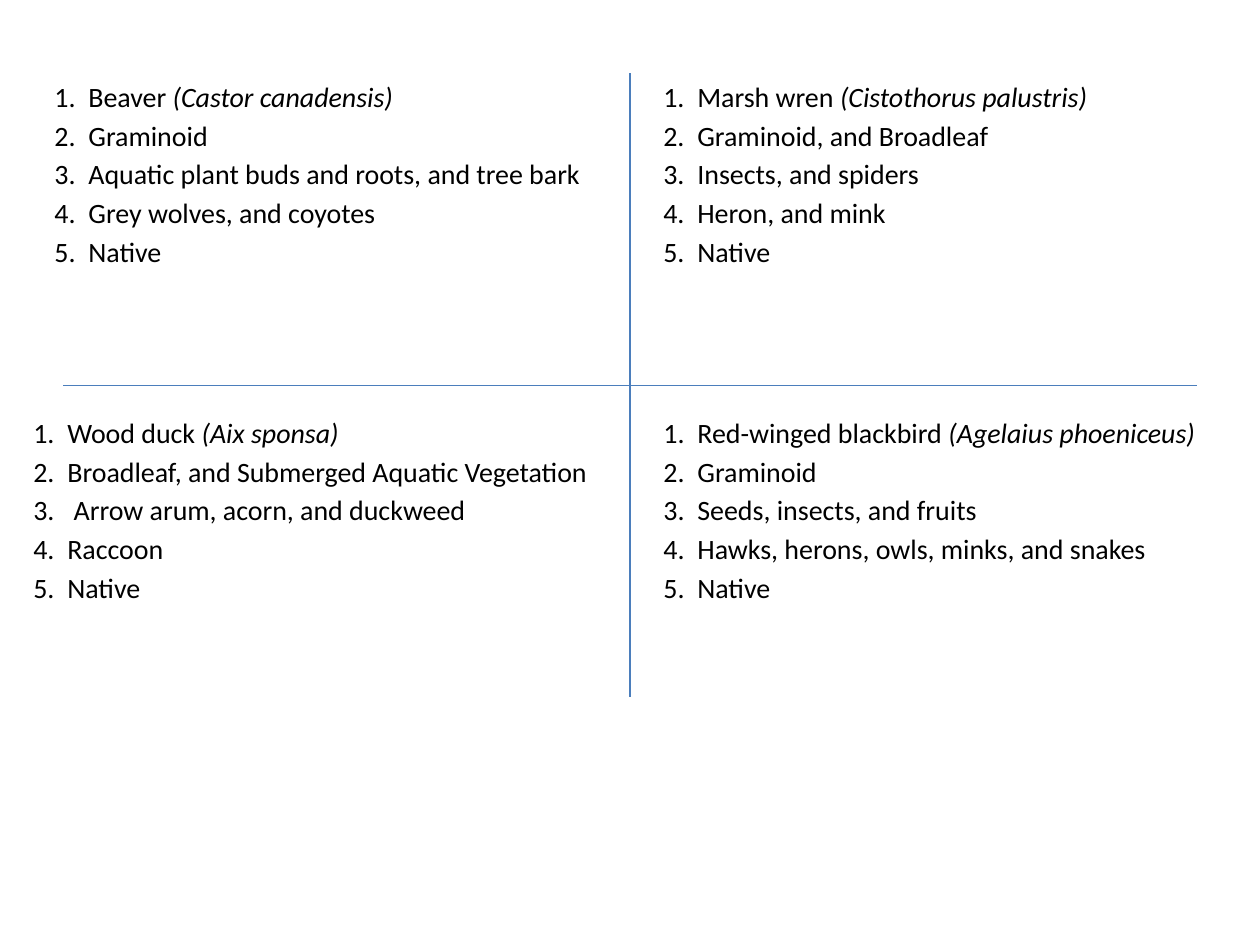
from lxml import etree
from pptx import Presentation
from pptx.dml.color import RGBColor
from pptx.enum.shapes import MSO_CONNECTOR
from pptx.enum.text import MSO_AUTO_SIZE
from pptx.oxml.ns import qn
from pptx.util import Inches, Pt

STRAIGHT = MSO_CONNECTOR.STRAIGHT
FIT_SHAPE = MSO_AUTO_SIZE.SHAPE_TO_FIT_TEXT
COLUMN = Inches(10) / 60
ROW = Inches(7.5) / 90
HANG = Inches(0.27)
RULE_COLOR = "4B7EBC"
TEXT_COLOR = "000000"

SPECIES = [
    ((2, 7, 26.8, 20), "Beaver", "(Castor canadensis)",
     ["Graminoid", "Aquatic plant buds and roots, and tree bark",
      "Grey wolves, and coyotes", "Native"]),
    ((31, 7, 22.2, 20), "Marsh wren", "(Cistothorus palustris)",
     ["Graminoid, and Broadleaf", "Insects, and spiders",
      "Heron, and mink", "Native"]),
    ((1, 39, 28.2, 20), "Wood duck", "(Aix sponsa)",
     ["Broadleaf, and Submerged Aquatic Vegetation",
      " Arrow arum, acorn, and duckweed", "Raccoon", "Native"]),
    ((31, 39, 27.4, 20), "Red-winged blackbird", "(Agelaius phoeniceus)",
     ["Graminoid", "Seeds, insects, and fruits",
      "Hawks, herons, owls, minks, and snakes", "Native"]),
]


def color(hex_value):
    return RGBColor.from_string(hex_value)


def place(left, top, right, bottom):
    return [round(n) for n in (left * COLUMN, top * ROW, right * COLUMN, bottom * ROW)]


def add_text(paragraph, text, size=16, font="Calibri", fill=TEXT_COLOR, italic=False):
    run = paragraph.add_run()
    run.text = text
    run.font.size = Pt(size)
    run.font.name = font
    run.font.italic = italic
    run.font.color.rgb = color(fill)


def add_rule(slide, ends):
    rule = slide.shapes.add_connector(STRAIGHT, *place(*ends))
    rule.line.color.rgb = color(RULE_COLOR)
    rule.line.width = Pt(0.75)
    etree.SubElement(rule._element.spPr, qn("a:effectLst"))


def add_species(slide, box, name, latin, facts):
    frame = slide.shapes.add_textbox(*place(*box)).text_frame
    frame.word_wrap = False
    frame.auto_size = FIT_SHAPE
    for number, entry in enumerate([name, *facts], 1):
        paragraph = frame.paragraphs[0] if number == 1 else frame.add_paragraph()
        paragraph.space_before = Pt(2.9)
        indents = paragraph._p.get_or_add_pPr()
        indents.set("marL", str(HANG))
        indents.set("indent", str(-HANG))
        if number == 1:
            add_text(paragraph, f"{number}.\t{entry} ")
            add_text(paragraph, latin, italic=True)
        else:
            add_text(paragraph, f"{number}.\t{entry}")


def main():
    deck = Presentation()
    deck.slide_width = Inches(10)
    deck.slide_height = Inches(7.5)
    slide = deck.slides.add_slide(deck.slide_layouts[6])
    for ends in [(30, 7, 30, 66.4), (3, 36.7, 57, 36.7)]:
        add_rule(slide, ends)
    for species in SPECIES:
        add_species(slide, *species)
    deck.save("out.pptx")


if __name__ == "__main__":
    main()
